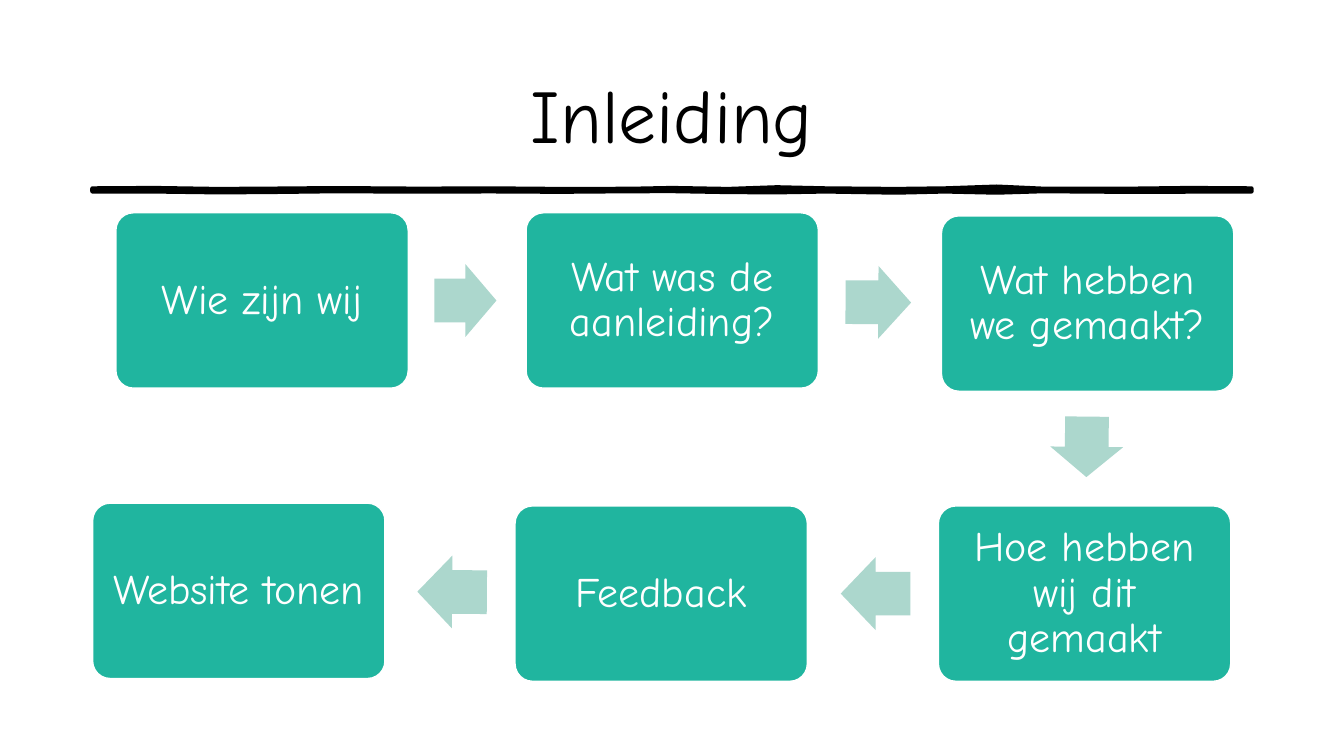
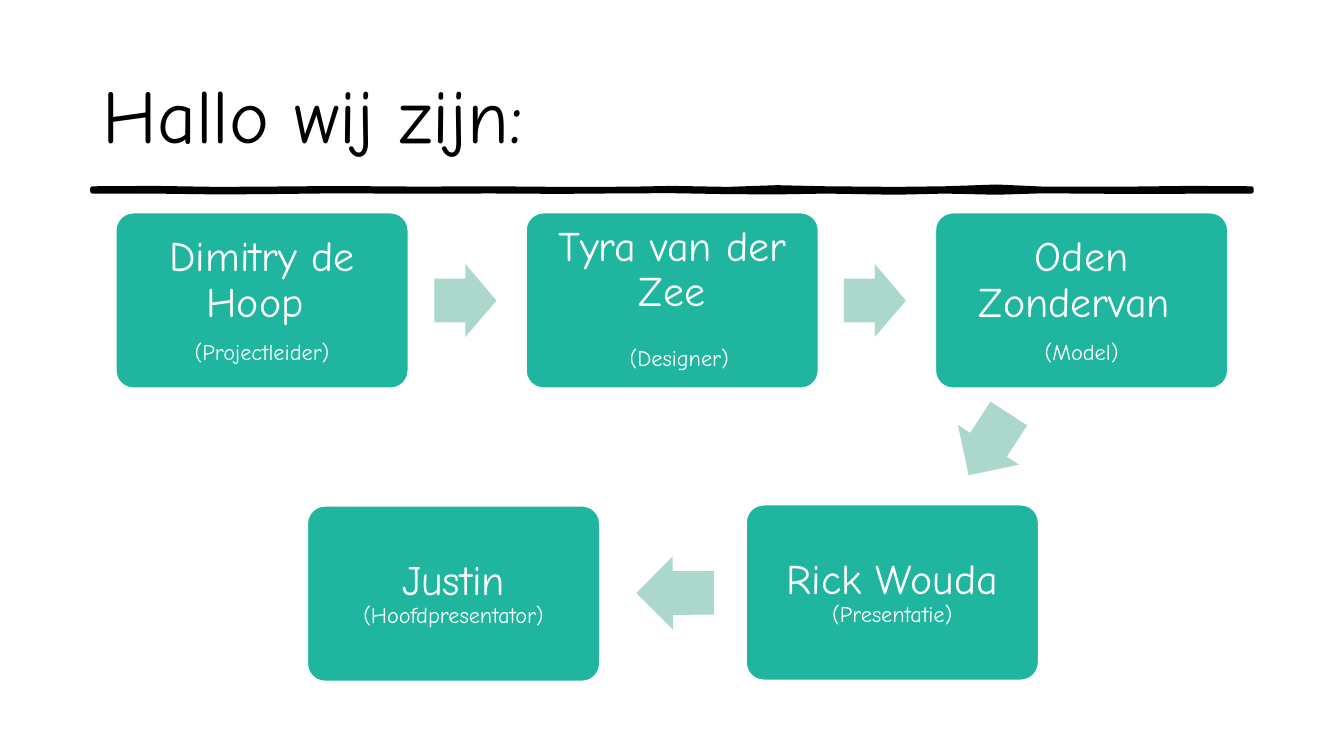
from pptx import Presentation
from pptx.dml.color import RGBColor
from pptx.enum.shapes import MSO_SHAPE as Preset
from pptx.enum.text import MSO_ANCHOR as Anchor, MSO_AUTO_SIZE as AutoSize, PP_ALIGN as Align
from pptx.util import Pt

FONT = "Comic Neue"
INK, WHITE, TEAL, MINT = "000000", "FFFFFF", "20B59F", "ACD7CD"
TITLE_ONLY = 5
MARGIN, CONTENT_WIDTH = 66, 828
BOX_WIDTH, BOX_HEIGHT, BOX_INSET = 208.8, 125.3, 8.64
ARROW_HEIGHT = 52
STEP_SIZE, ROLE_SIZE = 30, 16

RULE_EDGES = [
    (66, 134.6, 136.8), (110, 134.3, 136.8), (155, 135, 137.4),
    (190, 134.8, 137.2), (240, 134.4, 136.6), (300, 134.8, 136.9),
    (350, 134.6, 136.7), (400, 135, 137), (450, 134.9, 136.6),
    (480, 134.3, 136.5), (520, 135, 137.2), (555, 133.8, 137.4),
    (590, 134.6, 136.8), (640, 135, 137.6), (675, 134.6, 136.8),
    (712, 133.3, 137.6), (745, 134.8, 136.6), (800, 134.9, 137),
    (850, 134.3, 136.9), (894, 134.6, 136.8),
]

INTRO_BOXES = [
    (82.8, 152, [["Wie zijn wij"]]),
    (375.8, 152, [["Wat was de aanleiding?"]]),
    (672.5, 154.2, [["Wat hebben we gemaakt?"]]),
    (670.3, 361.4, [["Hoe hebben wij dit gemaakt"]]),
    (367.9, 361.4, [["Feedback"]]),
    (66.2, 359.4, [["Website tonen"]]),
]
INTRO_ARROWS = [
    (310.3, 188.7, 44.3, 0), (604, 190, 46.8, 0.4), (754.6, 293.2, 43.2, 90.6),
    (600.5, 398, 49.7, 180), (298.1, 396.8, 49.7, 180.4),
]

TEAM_BOXES = [
    (82.8, 152, [["Dimitry de Hoop "], ["(Projectleider)"]]),
    (375.8, 152, [["Tyra van der Zee"], [" ", "(Designer)"]]),
    (668.2, 152, [["Oden Zondervan "], ["(Model)"]]),
    (533, 360.6, [["Rick Wouda ", "(Presentatie)"]]),
    (219.6, 361.4, [["Justin ", "(Hoofdpresentator)"]]),
]
TEAM_ARROWS = [
    (310.3, 188.7, 44.3, 0), (602.8, 188.7, 44.3, 0),
    (679.9, 291.4, 52.6, 123), (454.5, 397.5, 55.4, 179.8),
]


def color(hex_value):
    return RGBColor.from_string(hex_value)


def paint(shape, fill, line=None, width=1):
    shape.shadow.inherit = False
    shape.fill.solid()
    shape.fill.fore_color.rgb = color(fill)
    if line:
        shape.line.color.rgb = color(line)
        shape.line.width = Pt(width)
    else:
        shape.line.fill.background()


def style_paragraph(paragraph, size, ink, align):
    paragraph.alignment = align
    paragraph.font.name = FONT
    paragraph.font.size = Pt(size)
    paragraph.font.color.rgb = color(ink)


def set_title(slide, text, align):
    title = slide.shapes.title
    title.left, title.top = Pt(MARGIN), Pt(28.8)
    title.width, title.height = Pt(CONTENT_WIDTH), Pt(104.4)
    frame = title.text_frame
    frame.text = text
    frame.auto_size = AutoSize.NONE
    frame.vertical_anchor = Anchor.MIDDLE
    style_paragraph(frame.paragraphs[0], 54, INK, align)


def add_brush_rule(slide):
    upper = [(Pt(x), Pt(top)) for x, top, _ in RULE_EDGES]
    lower = [(Pt(x), Pt(bottom)) for x, _, bottom in reversed(RULE_EDGES)]
    outline = slide.shapes.build_freeform(*upper[0])
    outline.add_line_segments(upper[1:] + lower, close=True)
    paint(outline.convert_to_shape(), INK, INK, 3)


def add_box(slide, left, top, paragraphs):
    box = slide.shapes.add_shape(
        Preset.ROUNDED_RECTANGLE, Pt(left), Pt(top), Pt(BOX_WIDTH), Pt(BOX_HEIGHT))
    box.adjustments[0] = 0.1
    paint(box, TEAL, WHITE)
    frame = box.text_frame
    frame.word_wrap = True
    frame.vertical_anchor = Anchor.MIDDLE
    frame.margin_left = frame.margin_right = Pt(BOX_INSET)
    frame.margin_top = frame.margin_bottom = Pt(BOX_INSET)
    for index, parts in enumerate(paragraphs):
        paragraph = frame.add_paragraph() if index else frame.paragraphs[0]
        style_paragraph(paragraph, STEP_SIZE, WHITE, Align.CENTER)
        paragraph.line_spacing = 0.9
        if index < len(paragraphs) - 1:
            paragraph.space_after = Pt(10.5)
        for part in parts:
            run = paragraph.add_run()
            run.text = part
            if part.startswith("("):
                run.font.size = Pt(ROLE_SIZE)


def add_arrow(slide, left, top, width, angle):
    arrow = slide.shapes.add_shape(
        Preset.RIGHT_ARROW, Pt(left), Pt(top), Pt(width), Pt(ARROW_HEIGHT))
    arrow.adjustments[0] = 0.6
    arrow.adjustments[1] = 0.5
    arrow.rotation = angle
    paint(arrow, MINT)


def add_flow_slide(deck, title, align, boxes, arrows):
    slide = deck.slides.add_slide(deck.slide_layouts[TITLE_ONLY])
    add_brush_rule(slide)
    set_title(slide, title, align)
    for box in boxes:
        add_box(slide, *box)
    for arrow in arrows:
        add_arrow(slide, *arrow)


def main():
    deck = Presentation()
    deck.slide_width, deck.slide_height = Pt(960), Pt(540)
    add_flow_slide(deck, "Inleiding", Align.CENTER, INTRO_BOXES, INTRO_ARROWS)
    add_flow_slide(deck, "Hallo wij zijn:", Align.LEFT, TEAM_BOXES, TEAM_ARROWS)
    deck.save("out.pptx")


if __name__ == "__main__":
    main()
